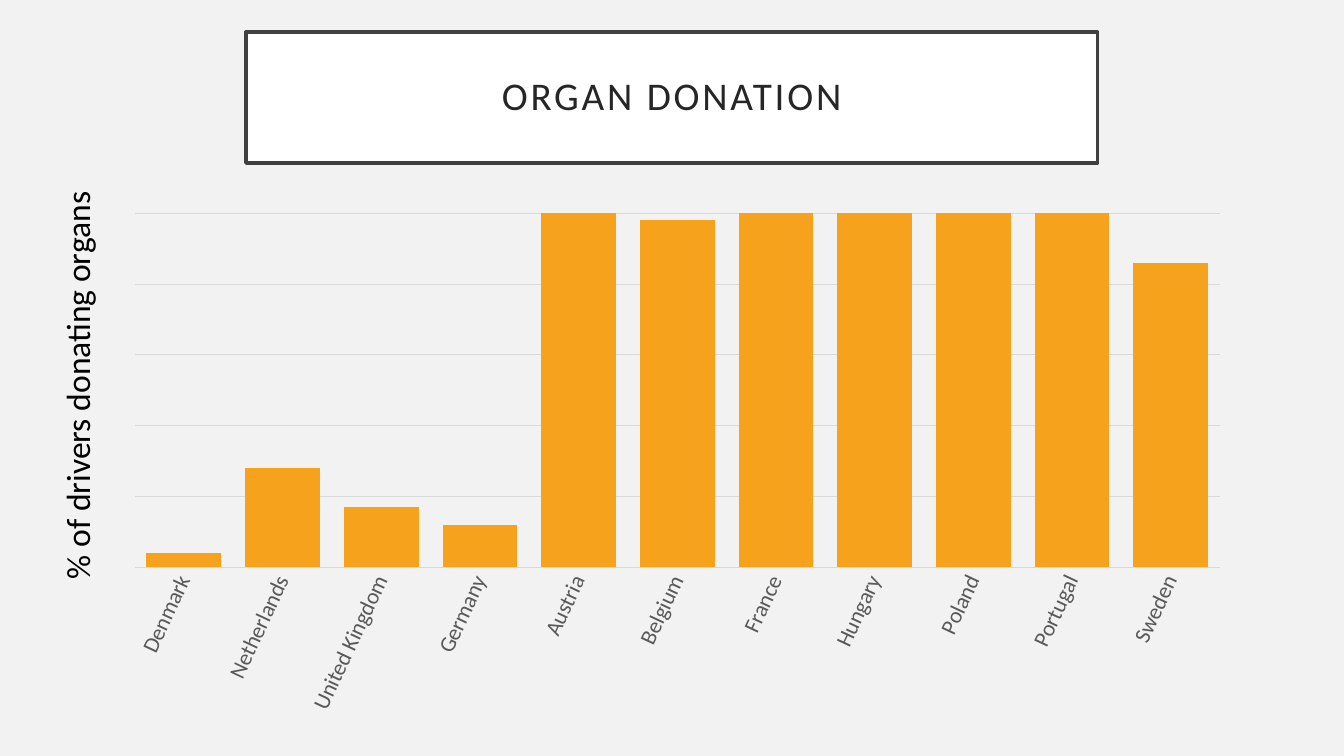
from lxml import etree
from pptx import Presentation, util as u
from pptx.chart.data import CategoryChartData
from pptx.dml.color import RGBColor
from pptx.enum import chart as ch, shapes, text
from pptx.oxml import parse_xml
from pptx.oxml.ns import nsdecls, qn

DONORS = {
    "Denmark": 4, "Netherlands": 28, "United Kingdom": 17, "Germany": 12,
    "Austria": 100, "Belgium": 98, "France": 100, "Hungary": 100,
    "Poland": 100, "Portugal": 100, "Sweden": 86,
}


def rgb(value):
    return RGBColor.from_string(value)


def assign(obj, values):
    for name, value in values.items():
        setattr(obj, name, value)


class Deck:
    FONT = "Calibri"
    BACK, WHITE, BLACK = "F2F2F2", "FFFFFF", "000000"
    FRAME, TITLE, LABEL, GRID, BAR = "404040", "262626", "595959", "D9D9D9", "F6A21D"

    def __init__(self):
        self.prs = Presentation()
        assign(self.prs, {"slide_width": u.Cm(33.87), "slide_height": u.Cm(19.05)})
        self.s = self.prs.slides.add_slide(self.prs.slide_layouts[6])
        self.fill(self.s.background, self.BACK)

    def fill(self, obj, color):
        obj.fill.solid()
        obj.fill.fore_color.rgb = rgb(color)

    def line(self, line, color, width):
        line.color.rgb = rgb(color)
        line.width = u.Pt(width)

    def font(self, font, size, color):
        assign(font, {"name": self.FONT, "size": u.Pt(size), "bold": False})
        font.color.rgb = rgb(color)

    def add_words(self, sp, words, size, color):
        p = sp.text_frame.paragraphs[0]
        r = p.add_run()
        r.text = words
        self.font(r.font, size, color)
        return p, r

    def title(self, words, *box):
        sp = self.s.shapes.add_shape(shapes.MSO_SHAPE.RECTANGLE, *map(u.Cm, box))
        sp.shadow.inherit = False
        self.fill(sp, self.WHITE)
        self.line(sp.line, self.FRAME, 2.5)
        inset = u.Cm(0.51)
        assign(sp.text_frame, {
            "word_wrap": True, "vertical_anchor": text.MSO_ANCHOR.MIDDLE,
            "margin_left": inset, "margin_right": inset,
            "margin_top": inset, "margin_bottom": inset})
        p, r = self.add_words(sp, words, 28, self.TITLE)
        assign(p, {"alignment": text.PP_ALIGN.CENTER, "line_spacing": 0.9})
        r.font._element.set("spc", "200")

    def side_label(self, words, *box):
        sp = self.s.shapes.add_textbox(*map(u.Cm, box))
        sp.rotation = 270
        assign(sp.text_frame, {"word_wrap": True,
                               "auto_size": text.MSO_AUTO_SIZE.SHAPE_TO_FIT_TEXT})
        self.add_words(sp, words, 24, self.BLACK)

    def columns(self, values, *box):
        data = CategoryChartData()
        data.categories = list(values)
        data.add_series("Series 1", list(values.values()))
        chart = self.s.shapes.add_chart(
            ch.XL_CHART_TYPE.COLUMN_CLUSTERED, *map(u.Cm, box), data).chart
        assign(chart, {"has_legend": False, "has_title": False})
        self.font(chart.font, 10, self.BLACK)
        plot = chart.plots[0]
        assign(plot, {"gap_width": 32, "overlap": -43, "vary_by_categories": False})
        self.fill(plot.series[0].format, self.BAR)

        cat, val = chart.category_axis, chart.value_axis
        assign(cat, {"major_tick_mark": ch.XL_TICK_MARK.NONE,
                     "minor_tick_mark": ch.XL_TICK_MARK.NONE})
        self.font(cat.tick_labels.font, 16, self.LABEL)
        self.line(cat.format.line, self.GRID, 0.75)
        cat._element.find(qn("c:txPr")).find(qn("a:bodyPr")).set("rot", "-3900000")
        assign(val, {"minimum_scale": 0, "maximum_scale": 100, "major_unit": 20,
                     "has_major_gridlines": True, "visible": False})
        self.line(val.major_gridlines.format.line, self.GRID, 0.75)
        self.place_plot(chart, x=0.02, y=0.02, w=0.96, h=0.68)

    def place_plot(self, chart, **parts):
        """Fix the inner plot area as fractions of the chart."""
        area = chart._chartSpace.chart.plotArea
        for old in area.findall(qn("c:layout")):
            area.remove(old)
        layout = parse_xml(f"<c:layout {nsdecls('c')}><c:manualLayout/></c:layout>")
        settings = {"layoutTarget": "inner", "xMode": "edge", "yMode": "edge", **parts}
        for name, value in settings.items():
            etree.SubElement(layout[0], qn(f"c:{name}")).set("val", str(value))
        area.insert(0, layout)


def main():
    deck = Deck()
    deck.title("ORGAN DONATION", 6.2, 0.81, 21.46, 3.3)
    deck.columns(DONORS, 2.82, 5.11, 28.5, 13.13)
    deck.side_label("% of drivers donating organs", -3.68, 8.59, 11.23, 1.27)
    deck.prs.save("out.pptx")


if __name__ == "__main__":
    main()
